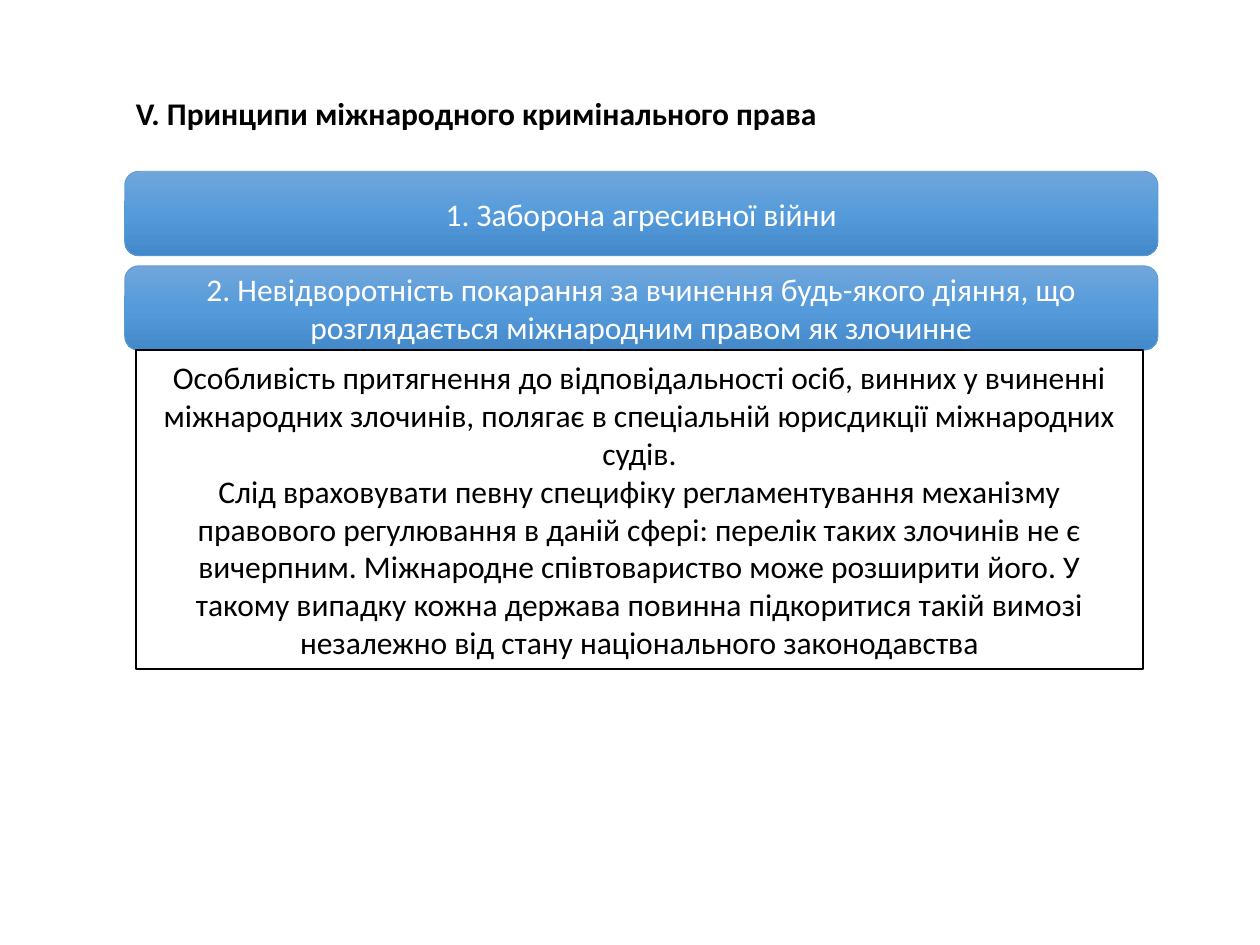
from copy import deepcopy
from dataclasses import dataclass

from pptx import Presentation
from pptx.dml.color import RGBColor
from pptx.enum.shapes import MSO_SHAPE as Shape
from pptx.enum.text import MSO_ANCHOR as Anchor, MSO_AUTO_SIZE as AutoSize, PP_ALIGN as Align
from pptx.oxml.ns import qn
from pptx.util import Inches, Pt

COLORS = {
    "text": "000000",
    "light_text": "FFFFFF",
    "panel": "FFFFFF",
    "panel_line": "000000",
    "bar_line": "5B9BD5",
    "bar_top": "71A6DB",
    "bar_middle": "559BDB",
    "bar_bottom": "448ACA",
}
BAR_GRADIENT = [(0, "bar_top"), (0.5, "bar_middle"), (1, "bar_bottom")]
FONT = {"name": "Calibri", "size": Pt(18)}
BAR_TOP, BAR_PITCH = 1.36, 0.75

TITLE = "V. Принципи міжнародного кримінального права"
PRINCIPLES = [
    "1. Заборона агресивної війни",
    "2. Невідворотність покарання за вчинення будь-якого діяння, "
    "що розглядається міжнародним правом як злочинне",
]
EXPLANATION = [
    "Особливість притягнення до відповідальності осіб, винних у вчиненні міжнародних "
    "злочинів, полягає в спеціальній юрисдикції міжнародних судів.",
    "Слід враховувати певну специфіку регламентування механізму правового регулювання "
    "в даній сфері: перелік таких злочинів не є вичерпним. Міжнародне співтовариство може "
    "розширити його. У такому випадку кожна держава повинна підкоритися такій вимозі "
    "незалежно від стану національного законодавства",
]


@dataclass
class Block:
    left: float
    top: float
    width: float
    height: float
    paragraphs: list[str]
    kind: Shape
    line: str
    line_width: float
    text_color: str

    def bounds(self) -> list[int]:
        return [Inches(n) for n in (self.left, self.top, self.width, self.height)]


def color(name: str) -> RGBColor:
    return RGBColor.from_string(COLORS[name])


def write_text(frame, paragraphs: list[str], text_color: str, align: Align, bold: bool = False) -> None:
    frame.word_wrap = True
    for index, text in enumerate(paragraphs):
        para = frame.paragraphs[0] if index == 0 else frame.add_paragraph()
        para.alignment = align
        span = para.add_run()
        span.text = text
        for key, value in {**FONT, "bold": bold}.items():
            setattr(span.font, key, value)
        span.font.color.rgb = color(text_color)


def fill_gradient(box) -> None:
    """Fill from top to bottom, adding a third stop to the default two."""
    box.fill.gradient()
    box.fill.gradient_angle = 270
    stop_list = box.element.spPr.find(".//" + qn("a:gsLst"))
    stop_list.append(deepcopy(stop_list[-1]))
    for stop, (position, name) in zip(box.fill.gradient_stops, BAR_GRADIENT):
        stop.position = position
        stop.color.rgb = color(name)


def draw_block(slide, block: Block):
    box = slide.shapes.add_shape(block.kind, *block.bounds())
    box.shadow.inherit = False
    box.line.color.rgb = color(block.line)
    box.line.width = Pt(block.line_width)
    box.text_frame.vertical_anchor = Anchor.MIDDLE
    write_text(box.text_frame, block.paragraphs, block.text_color, Align.CENTER)
    return box


def main() -> None:
    deck = Presentation()
    deck.slide_width, deck.slide_height = Inches(10), Inches(7.5)
    slide = deck.slides.add_slide(deck.slide_layouts[6])

    title = slide.shapes.add_textbox(Inches(0.98), Inches(0.7), Inches(8.09), Inches(0.4))
    write_text(title.text_frame, [TITLE], "text", Align.LEFT, bold=True)
    title.text_frame.auto_size = AutoSize.SHAPE_TO_FIT_TEXT

    for index, principle in enumerate(PRINCIPLES):
        bar = Block(0.99, BAR_TOP + index * BAR_PITCH, 8.2, 0.67, [principle],
                    Shape.FLOWCHART_ALTERNATE_PROCESS, "bar_line", 0.5, "light_text")
        fill_gradient(draw_block(slide, bar))

    panel = draw_block(slide, Block(1.08, 2.78, 7.99, 2.53, EXPLANATION,
                                    Shape.RECTANGLE, "panel_line", 1, "text"))
    panel.fill.solid()
    panel.fill.fore_color.rgb = color("panel")

    deck.save("out.pptx")


if __name__ == "__main__":
    main()
